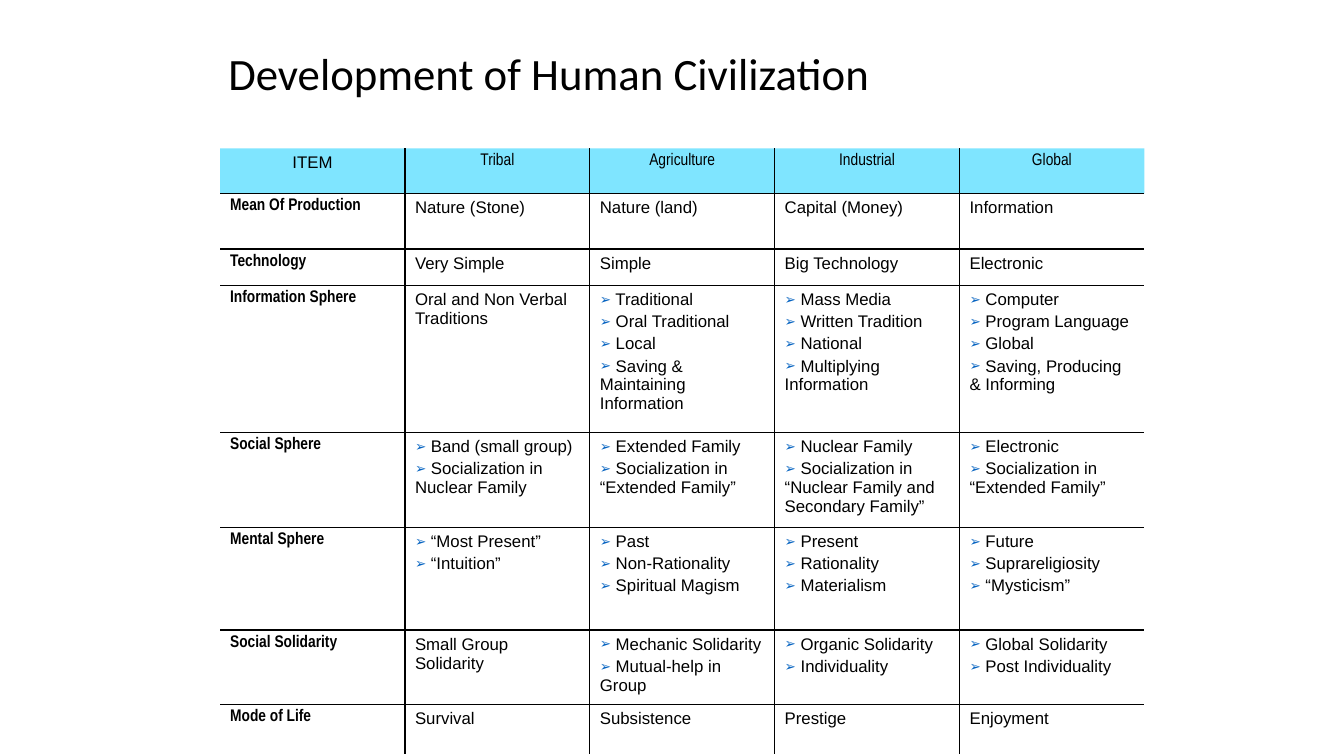
import pptx
import pptx.dml.color
import pptx.enum.text
import pptx.oxml.ns
import pptx.util
from dataclasses import dataclass
from lxml import etree

Pt = pptx.util.Pt
RGB = pptx.dml.color.RGBColor.from_string
ALIGN = pptx.enum.text.PP_ALIGN
ANCHOR = pptx.enum.text.MSO_ANCHOR


@dataclass(frozen=True)
class Theme:
    ink: str = "000000"
    header: str = "00CCFF"
    bullet: str = "0563C1"
    title_font: str = "Calibri"
    body_font: str = "Arial"
    label_font: str = "Arial Narrow"
    title_size: int = 32
    body_size: int = 12
    line: int = 1


T = Theme()

COL_WIDTH = 132.05
ROW_HEIGHTS = [32.4, 39.6, 25.9, 105.1, 67.7, 73.4, 53.3, 35.3]

# A string is a plain cell, a list is a bulleted one
ROWS = [
    ["ITEM", "Tribal", "Agriculture", "Industrial", "Global"],
    ["Mean Of Production", "Nature (Stone)", "Nature (land)",
     "Capital (Money)", "Information"],
    ["Technology", "Very Simple", "Simple", "Big Technology", "Electronic"],
    ["Information Sphere", "Oral and Non Verbal Traditions",
     ["Traditional", "Oral Traditional", "Local",
      "Saving & Maintaining Information"],
     ["Mass Media", "Written Tradition", "National",
      "Multiplying Information"],
     ["Computer", "Program Language", "Global",
      "Saving, Producing & Informing"]],
    ["Social Sphere",
     ["Band (small group)", "Socialization in Nuclear Family"],
     ["Extended Family", "Socialization in “Extended Family”"],
     ["Nuclear Family",
      "Socialization in “Nuclear Family and Secondary Family”"],
     ["Electronic", "Socialization in “Extended Family”"]],
    ["Mental Sphere",
     ["“Most Present”", "“Intuition”"],
     ["Past", "Non-Rationality", "Spiritual Magism"],
     ["Present", "Rationality", "Materialism"],
     ["Future", "Suprareligiosity", "“Mysticism”"]],
    ["Social Solidarity", "Small Group Solidarity",
     ["Mechanic Solidarity", "Mutual-help in Group"],
     ["Organic Solidarity", "Individuality"],
     ["Global Solidarity", "Post Individuality"]],
    ["Mode of Life", "Survival", "Subsistence", "Prestige", "Enjoyment"],
]


def sub(parent, tag, **attrs):
    """Append a DrawingML child element."""
    return etree.SubElement(parent, pptx.oxml.ns.qn("a:" + tag), attrs)


def write(p, text, font=T.body_font, size=T.body_size, bold=False,
          align=ALIGN.LEFT, before=None, bullet=None):
    p.alignment = align
    pPr = p._p.get_or_add_pPr()
    if before:
        sub(sub(pPr, "spcBef"), "spcPct", val=str(before * 1000))
    if bullet:
        pPr.set("marL", "0")
        pPr.set("indent", "0")
        sub(sub(pPr, "buClr"), "srgbClr", val=T.bullet)
        sub(pPr, "buSzPct", val="80000")
        sub(pPr, "buFont", typeface=T.body_font)
        sub(pPr, "buChar", char=bullet)
        text = " " + text
    r = p.add_run()
    r.text = text
    r.font.name = font
    r.font.size = Pt(size)
    r.font.bold = bold
    r.font.color.rgb = RGB(T.ink)


def add_title(s, text):
    tf = s.shapes.add_textbox(Pt(156), Pt(32.4), Pt(648), Pt(43.2)).text_frame
    tf.word_wrap = True
    tf.vertical_anchor = ANCHOR.MIDDLE
    tf.paragraphs[0].line_spacing = 0.9
    write(tf.paragraphs[0], text, font=T.title_font, size=T.title_size)


def set_borders(cell, sides):
    """Draw the named sides and clear the others."""
    tcPr = cell._tc.get_or_add_tcPr()
    for i, side in enumerate("LRTB"):
        ln = sub(tcPr, "ln" + side, w=str(Pt(T.line)))
        if side in sides:
            sub(sub(ln, "solidFill"), "srgbClr", val=T.ink)
        else:
            sub(ln, "noFill")
        tcPr.insert(i, ln)


def fill_header(cell):
    cell.fill.solid()
    cell.fill.fore_color.rgb = RGB(T.header)
    color = next(cell._tc.tcPr.iter(pptx.oxml.ns.qn("a:srgbClr")))
    sub(color, "alpha", val="50000")


def fill_cell(cell, content, row, col):
    header, label = row == 0, col == 0
    narrow = header != label
    bullet = "➢" if isinstance(content, list) else None
    lines = content if bullet else [content]
    tf = cell.text_frame
    for i, line in enumerate(lines):
        p = tf.add_paragraph() if i else tf.paragraphs[0]
        write(p, line, font=T.label_font if narrow else T.body_font,
              bold=label and not header, before=20, bullet=bullet,
              align=ALIGN.CENTER if header else ALIGN.LEFT)
    if header:
        fill_header(cell)
    else:
        cell.fill.background()


def add_grid(s, rows):
    n_rows, n_cols = len(rows), len(rows[0])
    frame = s.shapes.add_table(n_rows, n_cols, Pt(157.2), Pt(105.9),
                               Pt(COL_WIDTH * n_cols), Pt(sum(ROW_HEIGHTS)))
    table = frame.table
    table.first_row = table.horz_banding = False
    for column in table.columns:
        column.width = Pt(COL_WIDTH)
    for i, (height, row) in enumerate(zip(ROW_HEIGHTS, rows)):
        table.rows[i].height = Pt(height)
        for j, content in enumerate(row):
            cell = table.cell(i, j)
            fill_cell(cell, content, i, j)
            # Inner lines only: the outer edge stays open
            inner = {"L": j > 0, "R": j < n_cols - 1,
                     "T": i > 0, "B": i < n_rows - 1}
            set_borders(cell, [side for side in inner if inner[side]])


def main():
    prs = pptx.Presentation()
    prs.slide_width, prs.slide_height = Pt(960), Pt(540)
    s = prs.slides.add_slide(prs.slide_layouts[6])
    add_title(s, "Development of Human Civilization")
    add_grid(s, ROWS)
    prs.save("out.pptx")


if __name__ == "__main__":
    main()
